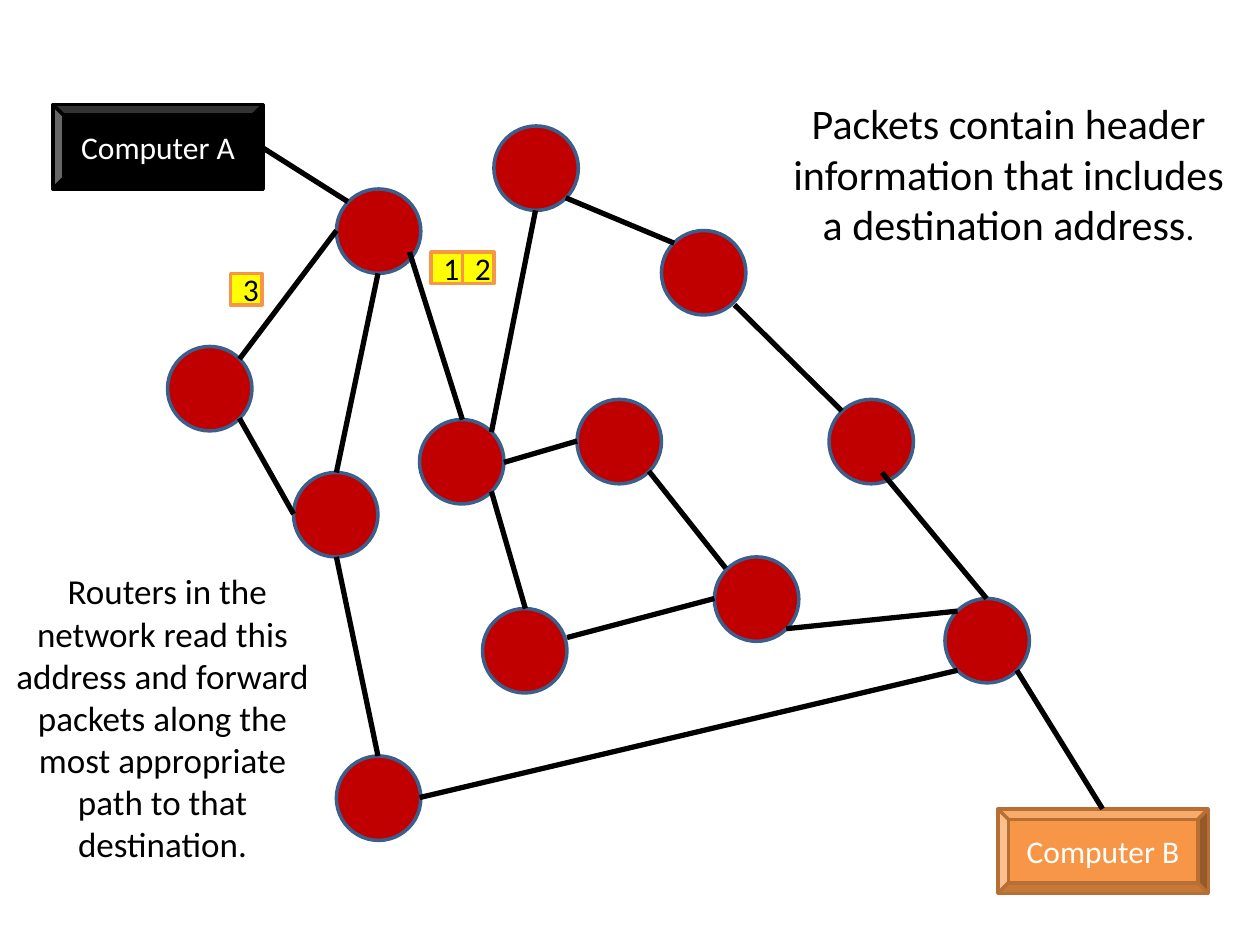
from lxml import etree
from pptx import Presentation
from pptx.dml.color import RGBColor
from pptx.enum.shapes import MSO_CONNECTOR, MSO_SHAPE
from pptx.enum.text import MSO_ANCHOR, PP_ALIGN
from pptx.oxml.ns import qn
from pptx.util import Inches, Pt

LINE = MSO_CONNECTOR.STRAIGHT
OVAL, BEVEL, RECT = MSO_SHAPE.OVAL, MSO_SHAPE.BEVEL, MSO_SHAPE.RECTANGLE
MIDDLE, CENTER = MSO_ANCHOR.MIDDLE, PP_ALIGN.CENTER

BLACK = RGBColor(0, 0, 0)
WHITE = RGBColor(0xFF, 0xFF, 0xFF)
RED = RGBColor(0xC0, 0, 0)
BLUE = RGBColor(0x3A, 0x5F, 0x8C)
YELLOW = RGBColor(0xFF, 0xFF, 0)
ORANGE = RGBColor(0xF7, 0x96, 0x46)
BROWN = RGBColor(0xB7, 0x6F, 0x34)

NODE = 0.67
PACKET = 0.25

deck = Presentation()
deck.slide_width, deck.slide_height = Inches(10), Inches(7.5)
slide = deck.slides.add_slide(deck.slide_layouts[6])
shapes = slide.shapes


def add_box(kind, left, top, width, height, fill, edge):
    box = shapes.add_shape(kind, Inches(left), Inches(top), Inches(width), Inches(height))
    box.shadow.inherit = False
    box.fill.solid()
    box.fill.fore_color.rgb = fill
    box.line.color.rgb = edge
    box.line.width = Pt(2)
    return box


def add_text(box, text, size=18, color=BLACK):
    """Append a run to the first paragraph of the box, centred both ways."""
    frame = box.text_frame
    frame.word_wrap = True
    frame.vertical_anchor = MIDDLE
    para = frame.paragraphs[0]
    para.alignment = CENTER
    run = para.add_run()
    run.text = text
    run.font.name = "Calibri"
    run.font.size = Pt(size)
    run.font.color.rgb = color


# Computers
for name, left, top, fill, edge in [
    ("Computer A", 0.42, 0.83, BLACK, BLACK),
    ("Computer B", 7.92, 6.42, ORANGE, BROWN),
]:
    add_text(add_box(BEVEL, left, top, 1.67, 0.67, fill, edge), name, color=WHITE)

# Routers
for left, top in [
    (2.67, 1.5), (1.33, 2.75), (3.33, 3.33), (2.33, 3.75),
    (3.92, 1), (5.67, 4.42), (5.25, 1.83), (4.58, 3.17),
    (6.58, 3.17), (3.83, 4.83), (7.5, 4.75), (2.67, 6),
]:
    add_box(OVAL, left, top, NODE, NODE, RED, BLUE)

# Links between routers and computers
for start, end in [
    ((2.08, 1.17), (2.76, 1.6)),
    ((2.67, 1.83), (1.9, 2.85)),
    ((3, 2.17), (2.67, 3.75)),
    ((1.9, 3.32), (2.33, 4.08)),
    ((3.25, 2), (3.67, 3.33)),
    ((4.58, 3.5), (4, 3.67)),
    ((4.17, 4.83), (3.9, 3.9)),
    ((5.15, 3.74), (5.76, 4.51)),
    ((6.24, 4.99), (7.6, 4.85)),
    ((4.5, 5.06), (5.67, 4.75)),
    ((3.9, 3.43), (4.25, 1.67)),
    ((4.49, 1.57), (5.35, 1.93)),
    ((5.83, 2.42), (6.68, 3.26)),
    ((7, 3.75), (7.83, 4.75)),
    ((8.07, 5.32), (8.75, 6.42)),
    ((2.67, 4.42), (3, 6)),
    ((7.6, 5.32), (3.33, 6.33)),
]:
    link = shapes.add_connector(LINE, *[Inches(n) for n in start + end])
    link.line.color.rgb = BLACK
    link.line.width = Pt(3)
    etree.SubElement(link._element.spPr, qn("a:effectLst"))

# Packets
for digit, left, top in [("1", 3.42, 2), ("2", 3.67, 2), ("3", 1.83, 2.17)]:
    add_text(add_box(RECT, left, top, PACKET, PACKET, YELLOW, ORANGE), digit)

# Captions
for place, runs in [
    ((6.17, 0.25, 3.67, 2.25), [
        ("Packets contain header information that includes a destination address", 24),
        (".", 20),
    ]),
    ((0, 4.33, 2.58, 2.67), [
        (" ", 24),
        ("Routers in the network read this address and forward packets "
         "along the most appropriate path to that destination.", 20),
    ]),
]:
    note = shapes.add_textbox(*[Inches(n) for n in place])
    for text, size in runs:
        add_text(note, text, size=size)

deck.save("out.pptx")
